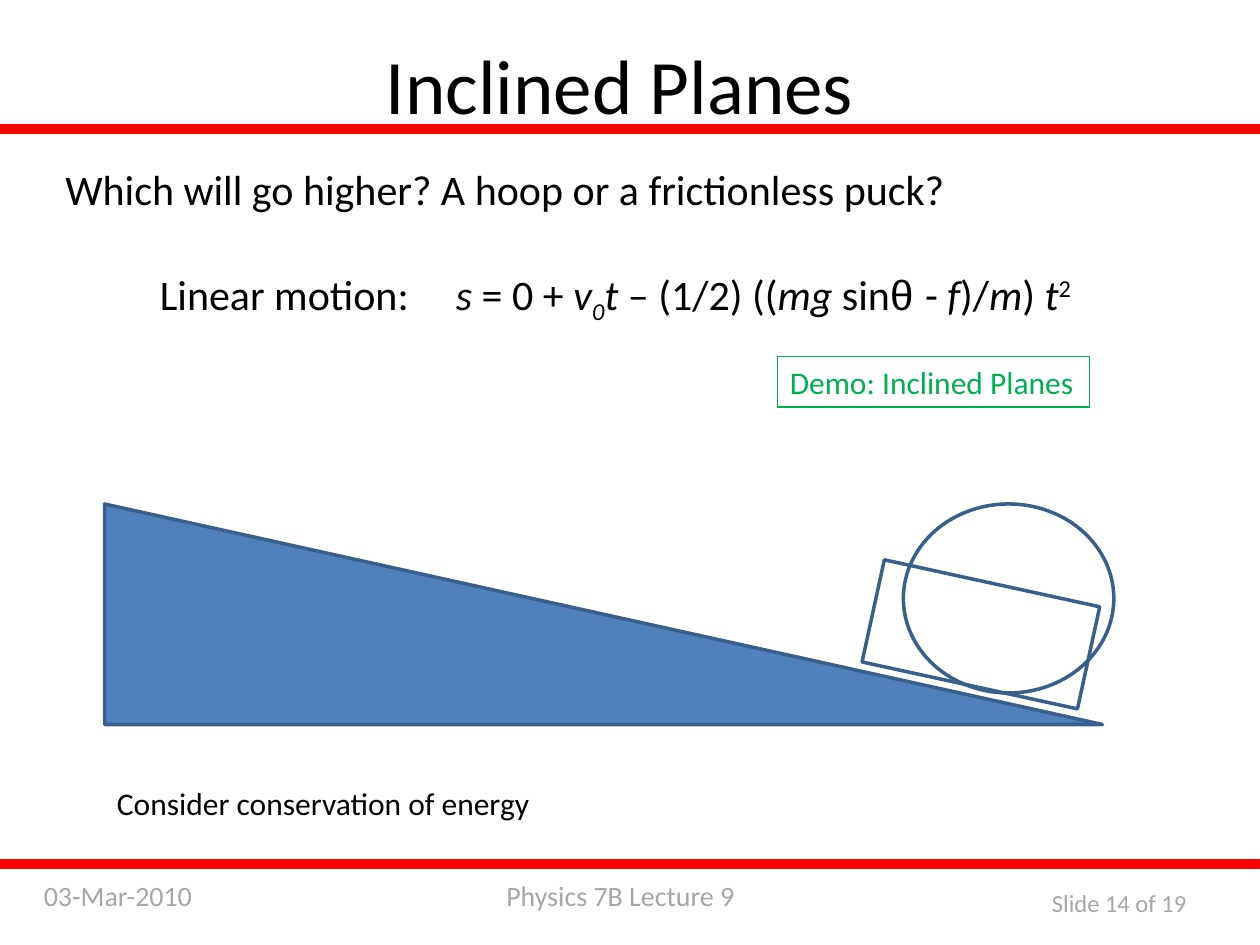
from typing import NamedTuple, Optional

from lxml import etree
from pptx import Presentation
from pptx.dml.color import RGBColor
from pptx.enum.shapes import MSO_SHAPE
from pptx.enum.text import MSO_ANCHOR, MSO_AUTO_SIZE, PP_ALIGN
from pptx.oxml.ns import qn
from pptx.util import Inches, Pt

RECT = MSO_SHAPE.RECTANGLE
WEDGE = MSO_SHAPE.RIGHT_TRIANGLE
OVAL = MSO_SHAPE.OVAL
LEFT, CENTER = PP_ALIGN.LEFT, PP_ALIGN.CENTER
TOP = MSO_ANCHOR.TOP
GROW, FIXED = MSO_AUTO_SIZE.SHAPE_TO_FIT_TEXT, MSO_AUTO_SIZE.NONE

BLACK = RGBColor(0x00, 0x00, 0x00)
GRAY = RGBColor(0xA6, 0xA6, 0xA6)
RED = RGBColor(0xFF, 0x00, 0x00)
GREEN = RGBColor(0x00, 0xB0, 0x50)
BLUE = RGBColor(0x4F, 0x81, 0xBD)
NAVY = RGBColor(0x3A, 0x5F, 0x8C)


class Box(NamedTuple):
    x: float
    y: float
    w: float
    h: float


class Part(NamedTuple):
    """A stretch of text with its own format; base is a percentage."""
    text: str
    slant: bool = False
    base: int = 0
    face: str = "Calibri"


class Form(NamedTuple):
    kind: int
    box: Box
    line: RGBColor
    fill: Optional[RGBColor] = None
    width: float = 2
    turn: float = 0


class Note(NamedTuple):
    text: str
    box: Box
    size: int
    color: RGBColor


def draw(slide, form: Form):
    shape = slide.shapes.add_shape(form.kind, *map(Inches, form.box))
    shape.shadow.inherit = False
    shape.rotation = form.turn
    shape.line.color.rgb = form.line
    shape.line.width = Pt(form.width)
    if form.fill is None:
        shape.fill.background()
    else:
        shape.fill.solid()
        shape.fill.fore_color.rgb = form.fill
    return shape


def write(shape, *parts: Part, size: int, color: RGBColor = BLACK,
          align: int = LEFT, wrap: bool = False, fit: int = GROW,
          tab: float = 0) -> None:
    frame = shape.text_frame
    frame.word_wrap = wrap
    frame.auto_size = fit
    frame.vertical_anchor = TOP
    para = frame.paragraphs[0]
    para.alignment = align
    if tab:
        stops = etree.SubElement(para._p.get_or_add_pPr(), qn("a:tabLst"))
        etree.SubElement(stops, qn("a:tab"), pos=str(Inches(tab)), algn="l")
    for part in parts:
        run = para.add_run()
        run.text = part.text
        font = run.font
        font.name, font.size, font.italic = part.face, Pt(size), part.slant
        font.color.rgb = color
        if part.base:
            run._r.get_or_add_rPr().set("baseline", str(part.base * 1000))


def label(slide, box: Box):
    return slide.shapes.add_textbox(*map(Inches, box))


BARS = [Form(RECT, Box(0, y, 10, 0.05), RED, RED) for y in (1, 6.83)]

SCENE = [
    Form(WEDGE, Box(0.83, 4, 7.92, 1.75), NAVY, BLUE),
    Form(OVAL, Box(7.17, 4, 1.67, 1.5), NAVY),
    Form(RECT, Box(6.91, 4.62, 1.75, 0.83), NAVY, turn=12.3),
]

NOTES = [
    Note("Physics 7B Lecture 9", Box(3.92, 6.92, 2.04, 0.37), 16, GRAY),
    Note("03-Mar-2010", Box(0.25, 6.92, 1.67, 0.37), 16, GRAY),
    Note("Slide 14 of 19", Box(8.25, 7, 1.31, 0.34), 14, GRAY),
    Note("Which will go higher? A hoop or a frictionless puck?",
         Box(0.42, 1.25, 7.24, 0.5), 24, BLACK),
    Note("Consider conservation of energy",
         Box(0.83, 6.17, 3.52, 0.4), 18, BLACK),
]

MOTION = [
    Part("Linear motion:\t"), Part("s", True), Part(" = 0 + "),
    Part("v", True), Part("0", True, -25), Part("t", True),
    Part(" – (1/2) (("), Part("mg ", True), Part("sin"),
    Part("θ ", face="Arial"), Part("- "), Part("f", True), Part(")/"),
    Part("m", True), Part(") "), Part("t", True), Part("2", base=30),
]


def main() -> None:
    deck = Presentation()
    deck.slide_width, deck.slide_height = Inches(10), Inches(7.5)
    slide = deck.slides.add_slide(deck.slide_layouts[6])

    # Red bars, then the ramp with hoop and puck
    for form in BARS + SCENE:
        draw(slide, form)

    # Title
    write(label(slide, Box(0.42, 0.25, 9, 0.67)), Part("Inclined Planes"),
          size=44, align=CENTER, wrap=True, fit=FIXED)

    # Footer and plain lines
    for note in NOTES:
        write(label(slide, note.box), Part(note.text),
              size=note.size, color=note.color)

    # Equation of motion
    write(label(slide, Box(1.17, 2.08, 7.51, 0.5)), *MOTION,
          size=24, tab=2.35)

    # Framed demo label
    demo = draw(slide, Form(RECT, Box(6.17, 2.83, 2.48, 0.4), GREEN,
                            width=0.75))
    write(demo, Part("Demo: Inclined Planes"), size=18, color=GREEN)

    deck.save("out.pptx")


if __name__ == "__main__":
    main()
